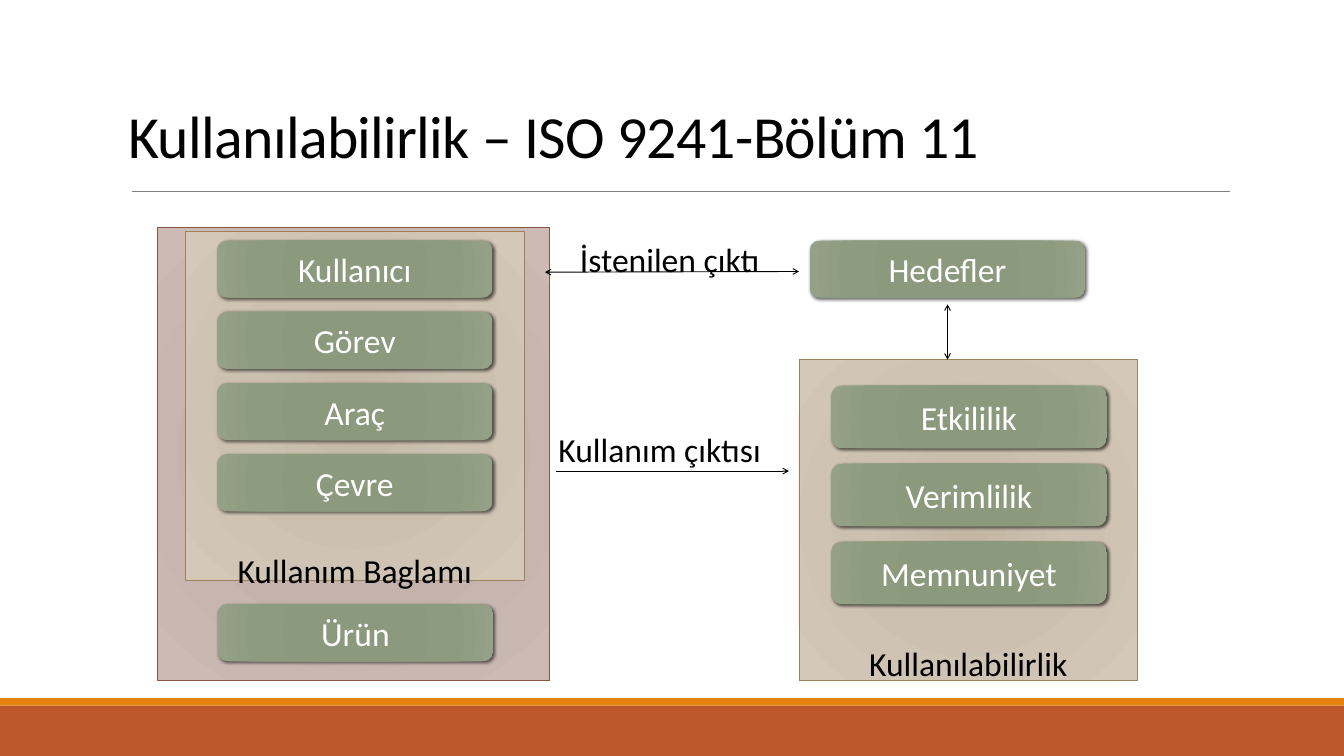
"""Build the slide on usability according to ISO 9241 part 11."""

import dataclasses
import typing

import lxml.etree
import pptx
import pptx.dml.color
import pptx.enum.dml
import pptx.enum.shapes
import pptx.enum.text
import pptx.oxml
import pptx.oxml.ns
import pptx.util

Inches = pptx.util.Inches
RGBColor = pptx.dml.color.RGBColor
Kind = pptx.enum.shapes.MSO_SHAPE
Anchor = pptx.enum.text.MSO_ANCHOR
Align = pptx.enum.text.PP_ALIGN

BLACK = RGBColor(0x00, 0x00, 0x00)
WHITE = RGBColor(0xFF, 0xFF, 0xFF)
GREY = RGBColor(0x80, 0x80, 0x80)
RUST = RGBColor(0xBD, 0x58, 0x2C)
ORANGE = RGBColor(0xE4, 0x83, 0x12)
BROWN = RGBColor(0x86, 0x56, 0x40)
TAN = RGBColor(0x9B, 0x83, 0x57)

Stops = dict[int, RGBColor]
ROSE_STOPS: Stops = {0: RGBColor(0xB9, 0xA4, 0x9E), 45: RGBColor(0xC4, 0xB2, 0xAD),
                     100: RGBColor(0xCC, 0xBA, 0xB5)}
SAND_STOPS: Stops = {0: RGBColor(0xC2, 0xB5, 0xA2), 45: RGBColor(0xCC, 0xC1, 0xB1),
                     100: RGBColor(0xD4, 0xC8, 0xB8)}
GREEN_STOPS: Stops = {0: RGBColor(0x8A, 0x98, 0x7B), 34: RGBColor(0x8B, 0x99, 0x7D),
                      70: RGBColor(0x8D, 0x9C, 0x7E), 100: RGBColor(0x94, 0xA1, 0x87)}

NAMESPACE = pptx.oxml.ns.nsdecls("a")
SHADOW = (
    f'<a:effectLst {NAMESPACE}><a:outerShdw blurRad="44450" dist="25400" dir="2700000" '
    'algn="br" rotWithShape="0"><a:srgbClr val="000000"><a:alpha val="60000"/></a:srgbClr>'
    "</a:outerShdw></a:effectLst>"
)


class Box(typing.NamedTuple):
    """Position and size in inches."""

    left: float
    top: float
    width: float
    height: float

    def lengths(self) -> list[pptx.util.Length]:
        """Return the four values as lengths."""
        return [Inches(value) for value in self]


@dataclasses.dataclass
class Panel:
    """Framed background, with a label hanging over its lower edge."""

    box: Box
    stops: Stops
    outline: RGBColor
    label: str = ""
    overhang: float = 0


@dataclasses.dataclass
class Arrow:
    """Straight line with open arrowheads."""

    start: tuple[float, float]
    end: tuple[float, float]
    color: RGBColor = BLACK
    width: float = 1
    heads: tuple[str, ...] = ("headEnd", "tailEnd")


@dataclasses.dataclass
class Caption:
    """Free text beside an arrow."""

    text: str
    box: Box


OUTER_PANEL = Panel(Box(2.35, 3.39, 5.83, 6.74), ROSE_STOPS, BROWN)
CONTEXT_PANEL = Panel(Box(2.76, 3.44, 5.04, 5.2), SAND_STOPS, TAN, "Kullanım Baglamı", 0.15)
USABILITY_PANEL = Panel(Box(11.89, 5.35, 5.04, 4.77), SAND_STOPS, TAN, "Kullanılabilirlik", 0.05)
CONTEXT_PARTS = ["Kullanıcı", "Görev", "Araç", "Çevre"]
USABILITY_PARTS = ["Etkililik", "Verimlilik", "Memnuniyet"]
RULE = Arrow((1.96, 2.85), (18.31, 2.85), GREY, 0.5, ())
ARROWS = [
    Arrow((8.11, 4.05), (11.89, 4.04)),
    Arrow((14.1, 4.53), (14.1, 5.35)),
    Arrow((8.27, 7.01), (11.74, 7.01), heads=("tailEnd",)),
]
CAPTIONS = [
    Caption("İstenilen çıktı", Box(8.43, 3.45, 3.31, 0.81)),
    Caption("Kullanım çıktısı", Box(8.11, 6.28, 3.47, 0.81)),
]
FRAME_FORMAT = {
    "word_wrap": True,
    "auto_size": pptx.enum.text.MSO_AUTO_SIZE.NONE,
    "margin_left": Inches(0.2),
    "margin_right": Inches(0.2),
    "margin_top": Inches(0.1),
    "margin_bottom": Inches(0.1),
}


def set_attributes(target: typing.Any, values: dict[str, typing.Any]) -> None:
    """Set every named attribute on the target."""
    for name, value in values.items():
        setattr(target, name, value)


def write_text(shape, text: str, color: RGBColor, size: float = 36,
               alignment=Align.CENTER, **frame_format) -> None:
    """Put one formatted paragraph in a shape."""
    set_attributes(shape.text_frame, FRAME_FORMAT | frame_format)
    paragraph = shape.text_frame.paragraphs[0]
    paragraph.alignment = alignment
    run = paragraph.add_run()
    run.text = text
    set_attributes(run.font, {"name": "Calibri", "size": pptx.util.Pt(size)})
    run.font.color.rgb = color


def fill_radial(shape, stops: Stops) -> None:
    """Give a shape a circular gradient."""
    stop_xml = "".join(
        f'<a:gs pos="{position * 1000}"><a:srgbClr val="{color}"/></a:gs>'
        for position, color in stops.items()
    )
    gradient = pptx.oxml.parse_xml(
        f'<a:gradFill {NAMESPACE} rotWithShape="1"><a:gsLst>{stop_xml}</a:gsLst>'
        '<a:path path="circle"><a:fillToRect l="100000" t="100000" r="100000" b="100000"/>'
        "</a:path></a:gradFill>"
    )
    shape._element.spPr.find(pptx.oxml.ns.qn("a:prstGeom")).addnext(gradient)


def draw_bar(shapes, box: Box, color: RGBColor) -> None:
    """Draw a plain footer bar."""
    shape = shapes.add_shape(Kind.RECTANGLE, *box.lengths())
    shape.shadow.inherit = False
    shape.fill.solid()
    shape.fill.fore_color.rgb = color
    shape.line.fill.background()


def draw_panel(shapes, panel: Panel) -> None:
    """Draw a panel and its label."""
    shape = shapes.add_shape(Kind.RECTANGLE, *panel.box.lengths())
    shape.shadow.inherit = False
    fill_radial(shape, panel.stops)
    shape.line.color.rgb = panel.outline
    shape.line.width = pptx.util.Pt(1)
    if panel.label:
        write_text(shape, panel.label, BLACK, vertical_anchor=Anchor.BOTTOM,
                   margin_bottom=Inches(-panel.overhang))


def draw_button(shapes, text: str, box: Box) -> None:
    """Draw a green rounded button with a soft shadow."""
    shape = shapes.add_shape(Kind.ROUNDED_RECTANGLE, *box.lengths())
    fill_radial(shape, GREEN_STOPS)
    shape.line.fill.background()
    shape._element.spPr.append(pptx.oxml.parse_xml(SHADOW))
    write_text(shape, text, WHITE, vertical_anchor=Anchor.MIDDLE)


def draw_column(shapes, texts: list[str], first: Box, pitch: float) -> None:
    """Draw buttons below one another at an equal pitch."""
    for index, text in enumerate(texts):
        draw_button(shapes, text, first._replace(top=first.top + index * pitch))


def draw_arrow(shapes, arrow: Arrow) -> None:
    """Draw a straight connector with its arrowheads."""
    ends = [Inches(value) for value in arrow.start + arrow.end]
    connector = shapes.add_connector(pptx.enum.shapes.MSO_CONNECTOR.STRAIGHT, *ends)
    connector.line.color.rgb = arrow.color
    connector.line.width = pptx.util.Pt(arrow.width)
    outline = connector.line._get_or_add_ln()
    for head in arrow.heads:
        lxml.etree.SubElement(outline, pptx.oxml.ns.qn(f"a:{head}"), type="arrow")
    lxml.etree.SubElement(connector._element.spPr, pptx.oxml.ns.qn("a:effectLst"))


def draw_title(title) -> None:
    """Place and format the slide title."""
    box = Box(1.81, 1.53, 17.64, 1.06)
    set_attributes(title, dict(zip(("left", "top", "width", "height"), box.lengths())))
    write_text(title, "Kullanılabilirlik – ISO 9241-Bölüm 11", BLACK, 64, Align.LEFT,
               vertical_anchor=Anchor.BOTTOM, margin_left=Inches(0.1), margin_right=Inches(0.1),
               margin_top=Inches(0.05), margin_bottom=Inches(0.05))
    paragraph = title.text_frame.paragraphs[0]
    paragraph.line_spacing = 0.85
    paragraph.runs[0].font._element.set("spc", "-70")


def main() -> None:
    """Build and save the presentation."""
    presentation = pptx.Presentation()
    set_attributes(presentation, {"slide_width": Inches(20), "slide_height": Inches(11.25)})
    slide = presentation.slides.add_slide(presentation.slide_layouts[5])
    shapes = slide.shapes
    draw_bar(shapes, Box(0, 10.5, 20, 0.75), RUST)
    draw_bar(shapes, Box(0, 10.39, 20, 0.11), ORANGE)
    draw_arrow(shapes, RULE)
    draw_panel(shapes, OUTER_PANEL)
    draw_panel(shapes, CONTEXT_PANEL)
    draw_title(shapes.title)
    draw_column(shapes, CONTEXT_PARTS, Box(3.23, 3.58, 4.1, 0.85), 1.06)
    draw_button(shapes, "Ürün", Box(3.24, 8.99, 4.1, 0.85))
    draw_button(shapes, "Hedefler", Box(12.05, 3.58, 4.1, 0.85))
    group = shapes.add_group_shape()
    draw_panel(group.shapes, USABILITY_PANEL)
    draw_column(group.shapes, USABILITY_PARTS, Box(12.37, 5.74, 4.1, 0.93), 1.16)
    for arrow in ARROWS:
        draw_arrow(shapes, arrow)
    for caption in CAPTIONS:
        textbox = shapes.add_textbox(*caption.box.lengths())
        write_text(textbox, caption.text, BLACK, alignment=Align.LEFT)
    presentation.save("out.pptx")


if __name__ == "__main__":
    main()
